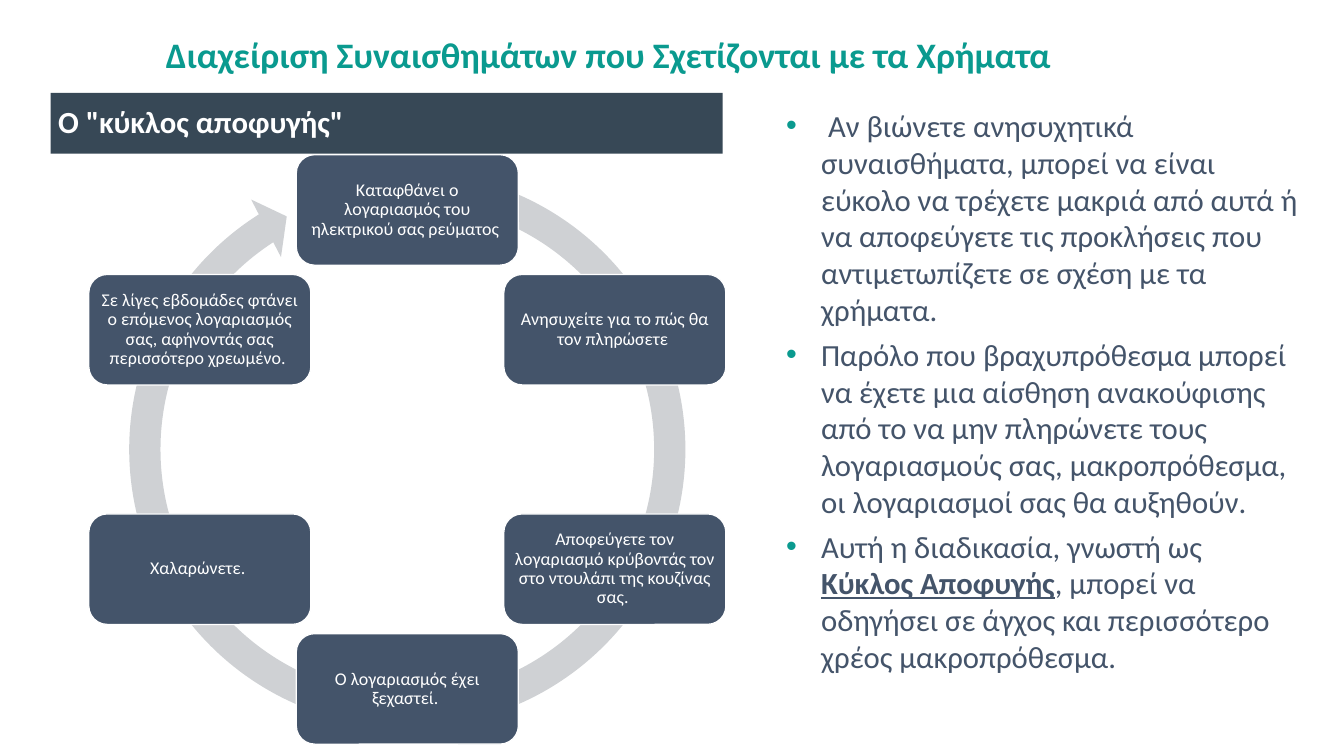
import math

from lxml import etree
from pptx import Presentation
from pptx.dml.color import RGBColor
from pptx.enum.shapes import MSO_SHAPE
from pptx.enum.text import MSO_ANCHOR, PP_ALIGN
from pptx.oxml.ns import qn
from pptx.util import Inches, Pt

TEAL = RGBColor(0x0A, 0x9A, 0x8F)
NAVY = RGBColor(0x44, 0x54, 0x6A)
SLATE = RGBColor(0x37, 0x48, 0x56)
SILVER = RGBColor(0xCF, 0xD1, 0xD4)
WHITE = RGBColor(0xFF, 0xFF, 0xFF)

TITLE = "Διαχείριση Συναισθημάτων που Σχετίζονται με τα Χρήματα"
BANNER = 'Ο "κύκλος αποφυγής" '
STEPS = [
    "Καταφθάνει ο λογαριασμός του ηλεκτρικού σας ρεύματος ",
    "Ανησυχείτε για το πώς θα τον πληρώσετε ",
    "Αποφεύγετε τον λογαριασμό κρύβοντάς τον στο ντουλάπι της κουζίνας σας. ",
    "Ο λογαριασμός έχει ξεχαστεί. ",
    "Χαλαρώνετε. ",
    "Σε λίγες εβδομάδες φτάνει ο επόμενος λογαριασμός σας, αφήνοντάς σας περισσότερο χρεωμένο. ",
]
KEY_TERM = " Κύκλος Αποφυγής"
POINTS = [
    [" Αν βιώνετε ανησυχητικά συναισθήματα, μπορεί να είναι εύκολο να τρέχετε μακριά "
     "από αυτά ή να αποφεύγετε τις προκλήσεις που αντιμετωπίζετε σε σχέση με τα χρήματα."],
    ["Παρόλο που βραχυπρόθεσμα μπορεί να έχετε μια αίσθηση ανακούφισης από το να μην "
     "πληρώνετε τους λογαριασμούς σας, μακροπρόθεσμα, οι λογαριασμοί σας θα αυξηθούν."],
    ["Αυτή η διαδικασία, γνωστή ως", KEY_TERM,
     ", μπορεί να οδηγήσει σε άγχος και περισσότερο χρέος μακροπρόθεσμα."],
]

POINTS_PER_INCH = 72
PAGE_WIDTH, PAGE_HEIGHT = 1050 / POINTS_PER_INCH, 591 / POINTS_PER_INCH
CENTER_X, CENTER_Y, RADIUS = 4.42, 4.88, 2.6
STEP_WIDTH, STEP_HEIGHT = 2.41, 1.2
RING_SIZE = 6.4
RING_ADJUSTMENTS = [0.053, 3.126, 142.468, 171.161, 0.055]


def style_font(paragraph, size, color, bold=False):
    font = paragraph.font
    font.name = "Calibri"
    font.size = Pt(size)
    font.bold = bold
    font.color.rgb = color


def prepare_frame(frame, margin_x, margin_y, anchor):
    frame.word_wrap = True
    frame.margin_left = frame.margin_right = Inches(margin_x)
    frame.margin_top = frame.margin_bottom = Inches(margin_y)
    frame.vertical_anchor = anchor


def add_filled(slide, preset, left, top, width, height, color):
    shape = slide.shapes.add_shape(
        preset, Inches(left), Inches(top), Inches(width), Inches(height))
    shape.shadow.inherit = False
    shape.fill.solid()
    shape.fill.fore_color.rgb = color
    shape.line.fill.background()
    return shape


def write_line(frame, wording, size, color, align, bold=False):
    paragraph = frame.paragraphs[0]
    paragraph.text = wording
    paragraph.alignment = align
    paragraph.line_spacing = 0.9
    style_font(paragraph, size, color, bold)


def add_title(slide):
    title = slide.shapes.add_textbox(Inches(1.72), Inches(0.22), Inches(12.15), Inches(0.79))
    prepare_frame(title.text_frame, 0.08, 0.05, MSO_ANCHOR.MIDDLE)
    write_line(title.text_frame, TITLE, 28, TEAL, PP_ALIGN.LEFT, True)


def add_banner(slide):
    banner = add_filled(slide, MSO_SHAPE.RECTANGLE, 0.55, 1.01, 7.29, 0.66, SLATE)
    prepare_frame(banner.text_frame, 0.08, 0.05, MSO_ANCHOR.MIDDLE)
    write_line(banner.text_frame, BANNER, 24, WHITE, PP_ALIGN.JUSTIFY, True)


def add_ring(slide):
    ring = add_filled(slide, MSO_SHAPE.CIRCULAR_ARROW, CENTER_X - RING_SIZE / 2,
                      CENTER_Y - RING_SIZE / 2, RING_SIZE, RING_SIZE, SILVER)
    for index, value in enumerate(RING_ADJUSTMENTS):
        ring.adjustments[index] = value


def add_step(slide, index, wording):
    angle = math.tau * index / len(STEPS)
    left = CENTER_X + RADIUS * math.sin(angle) - STEP_WIDTH / 2
    top = CENTER_Y - RADIUS * math.cos(angle) - STEP_HEIGHT / 2
    step = add_filled(slide, MSO_SHAPE.ROUNDED_RECTANGLE, left, top,
                      STEP_WIDTH, STEP_HEIGHT, NAVY)
    step.line.color.rgb = WHITE
    step.line.width = Pt(1)
    prepare_frame(step.text_frame, 0.06, 0.06, MSO_ANCHOR.MIDDLE)
    write_line(step.text_frame, wording, 14, WHITE, PP_ALIGN.CENTER)


def add_bullet(paragraph):
    properties = paragraph._p.get_or_add_pPr()
    properties.set("marL", str(Inches(0.38)))
    properties.set("indent", str(-Inches(0.38)))
    bullet_color = etree.SubElement(properties, qn("a:buClr"))
    etree.SubElement(bullet_color, qn("a:srgbClr"), val=str(TEAL))
    etree.SubElement(properties, qn("a:buFont"), typeface="Arial")
    etree.SubElement(properties, qn("a:buChar"), char="•")


def add_points(slide):
    points = slide.shapes.add_textbox(Inches(8.45), Inches(1.11), Inches(5.74), Inches(7.1))
    frame = points.text_frame
    prepare_frame(frame, 0.08, 0.05, MSO_ANCHOR.TOP)
    for index, pieces in enumerate(POINTS):
        paragraph = frame.add_paragraph() if index else frame.paragraphs[0]
        paragraph.space_after = Pt(6)
        add_bullet(paragraph)
        style_font(paragraph, 24, NAVY)
        for piece in pieces:
            run = paragraph.add_run()
            run.text = piece
            if piece == KEY_TERM:
                run.font.bold = True
                run.font.underline = True


def main():
    deck = Presentation()
    deck.slide_width = Inches(PAGE_WIDTH)
    deck.slide_height = Inches(PAGE_HEIGHT)
    slide = deck.slides.add_slide(deck.slide_layouts[6])
    add_points(slide)
    add_banner(slide)
    add_ring(slide)
    for index, wording in enumerate(STEPS):
        add_step(slide, index, wording)
    add_title(slide)
    deck.save("out.pptx")


if __name__ == "__main__":
    main()
